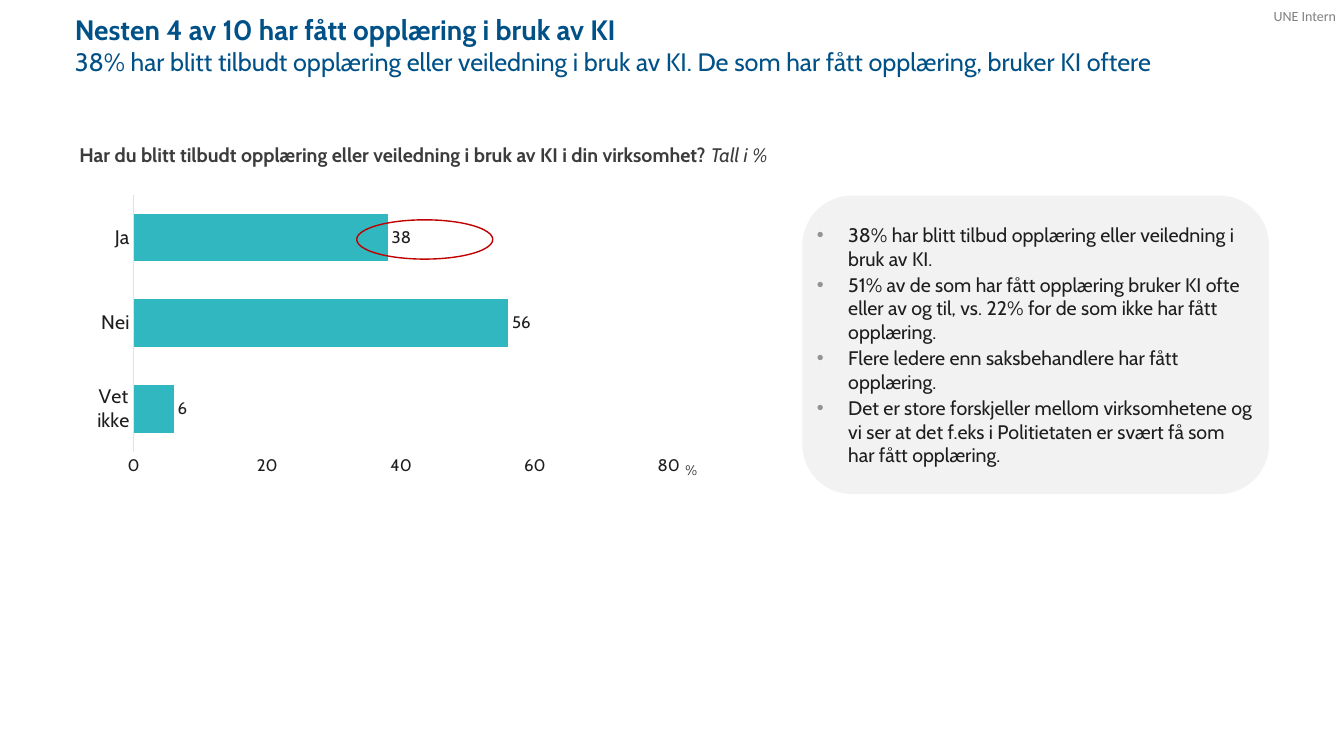
"""Build the slide on training in the use of AI."""
import pptx
import pptx.chart.data
import pptx.dml.color
import pptx.enum.chart
import pptx.enum.shapes
import pptx.enum.text
import pptx.oxml
import pptx.oxml.ns
import pptx.util

Cm, Pt = pptx.util.Cm, pptx.util.Pt
enum = pptx.enum
DARK, GREY, BLUE = "1E1E1E", "3C3C3C", "005187"


def color(code):
    return pptx.dml.color.RGBColor.from_string(code)


def write(para, text, size=14, fill=DARK, bold=False, italic=False, face="Cabin"):
    run = para.add_run()
    run.text = text
    font = run.font
    font.size, font.bold, font.italic, font.name = Pt(size), bold, italic, face
    font.color.rgb = color(fill)


deck = pptx.Presentation()
deck.slide_width, deck.slide_height = Cm(33.87), Cm(19.05)
slide = deck.slides.add_slide(deck.slide_layouts[5])
shapes = slide.shapes

title = shapes.title
title.left, title.top, title.width, title.height = Cm(1.63), Cm(0.2), Cm(30.35), Cm(1.73)
frame = title.text_frame
frame.auto_size = enum.text.MSO_AUTO_SIZE.NONE
frame.vertical_anchor = enum.text.MSO_ANCHOR.TOP
lines = [
    ("Nesten 4 av 10 har fått opplæring i bruk av KI", 20, True),
    ("38% har blitt tilbudt opplæring eller veiledning i bruk av KI. "
     "De som har fått opplæring, bruker KI oftere", 18, False),
]
for i, (text, size, bold) in enumerate(lines):
    para = frame.add_paragraph() if i else frame.paragraphs[0]
    para.alignment = enum.text.PP_ALIGN.LEFT
    write(para, text, size, BLUE, bold)

mark = shapes.add_textbox(Cm(32.1), Cm(0.18), Cm(1.66), Cm(0.43)).text_frame
mark.margin_left = mark.margin_right = mark.margin_top = mark.margin_bottom = 0
write(mark.paragraphs[0], "UNE Intern", 10, "7F7F7F", face="Calibri")

ask = shapes.add_textbox(Cm(1.75), Cm(3.38), Cm(18.08), Cm(0.89)).text_frame
ask.word_wrap = True
para = ask.paragraphs[0]
para.line_spacing = 1.15
write(para, "Har du blitt tilbudt opplæring eller veiledning i bruk av KI i din virksomhet? ",
      fill=GREY, bold=True)
write(para, "Tall i %", fill=GREY, italic=True)

data = pptx.chart.data.CategoryChartData()
data.categories = ["Vet ikke", "Nei", "Ja"]
data.add_series("Andel", [6, 56, 38])
chart = shapes.add_chart(enum.chart.XL_CHART_TYPE.BAR_CLUSTERED,
                         Cm(2.26), Cm(4.75), Cm(14.94), Cm(8.13), data).chart
chart.has_legend = chart.has_title = False
plot = chart.plots[0]
plot.gap_width = 80
plot.vary_by_categories = False
fill = plot.series[0].format.fill
fill.solid()
fill.fore_color.rgb = color("30B7C0")
plot.has_data_labels = True
labels = plot.data_labels
labels.show_value = True
labels.position = enum.chart.XL_LABEL_POSITION.OUTSIDE_END

names, scale = chart.category_axis, chart.value_axis
for axis in (names, scale):
    axis.has_major_gridlines = False
    axis.major_tick_mark = axis.minor_tick_mark = enum.chart.XL_TICK_MARK.NONE
names.format.line.color.rgb = color("E2E2E2")
names.format.line.width = Pt(0.75)
scale.format.line.fill.background()
scale.minimum_scale, scale.maximum_scale, scale.major_unit = 0, 80, 20
for font, size in ((chart.font, 10), (names.tick_labels.font, 14),
                   (scale.tick_labels.font, 12), (labels.font, 12)):
    font.name, font.size = "Cabin", Pt(size)
    font.color.rgb = color(DARK)

area = chart.plots[0]._element.getparent()
for old in area.findall(pptx.oxml.ns.qn("c:layout")):
    area.remove(old)
place = {"layoutTarget": "inner", "xMode": "edge", "yMode": "edge",
         "x": 0.074, "y": 0.019, "w": 0.903, "h": 0.797}
parts = "".join(f'<c:{key} val="{val}"/>' for key, val in place.items())
area.insert(0, pptx.oxml.parse_xml(
    f'<c:layout {pptx.oxml.ns.nsdecls("c")}><c:manualLayout>{parts}</c:manualLayout></c:layout>'))

unit = shapes.add_textbox(Cm(17.02), Cm(11.51), Cm(0.76), Cm(0.69)).text_frame
write(unit.paragraphs[0], "%", 10, GREY)

ring = shapes.add_shape(enum.shapes.MSO_SHAPE.OVAL, Cm(8.99), Cm(5.54), Cm(3.43), Cm(0.99))
ring.shadow.inherit = False
ring.fill.background()
ring.line.color.rgb = color("C00000")
ring.line.width = Pt(1)

panel = shapes.add_shape(enum.shapes.MSO_SHAPE.ROUNDED_RECTANGLE,
                         Cm(20.22), Cm(4.93), Cm(11.76), Cm(7.52))
panel.shadow.inherit = False
panel.fill.solid()
panel.fill.fore_color.rgb = color("F2F2F2")
panel.line.fill.background()
frame = panel.text_frame
frame.word_wrap = True
frame.vertical_anchor = enum.text.MSO_ANCHOR.MIDDLE
frame.margin_left = frame.margin_right = frame.margin_top = frame.margin_bottom = 0
points = [
    "38% har blitt tilbud opplæring eller veiledning i bruk av KI.",
    "51% av de som har fått opplæring bruker KI ofte eller av og til, "
    "vs. 22% for de som ikke har fått opplæring.",
    "Flere ledere enn saksbehandlere har fått opplæring.",
    "Det er store forskjeller mellom virksomhetene og vi ser at det f.eks "
    "i Politietaten er svært få som har fått opplæring.",
]
space = pptx.oxml.ns.nsdecls("a")
for i, text in enumerate(points):
    para = frame.add_paragraph() if i else frame.paragraphs[0]
    para.alignment = enum.text.PP_ALIGN.LEFT
    para.space_before = Pt(2 if i else 0)
    props = para._p.get_or_add_pPr()
    props.set("marL", str(Cm(0.79)))
    props.set("indent", str(-Cm(0.79)))
    for item in (f'<a:buClr {space}><a:srgbClr val="939393"/></a:buClr>',
                 f'<a:buFont {space} typeface="Arial"/>',
                 f'<a:buChar {space} char="•"/>'):
        props.append(pptx.oxml.parse_xml(item))
    write(para, text)

deck.save("out.pptx")
